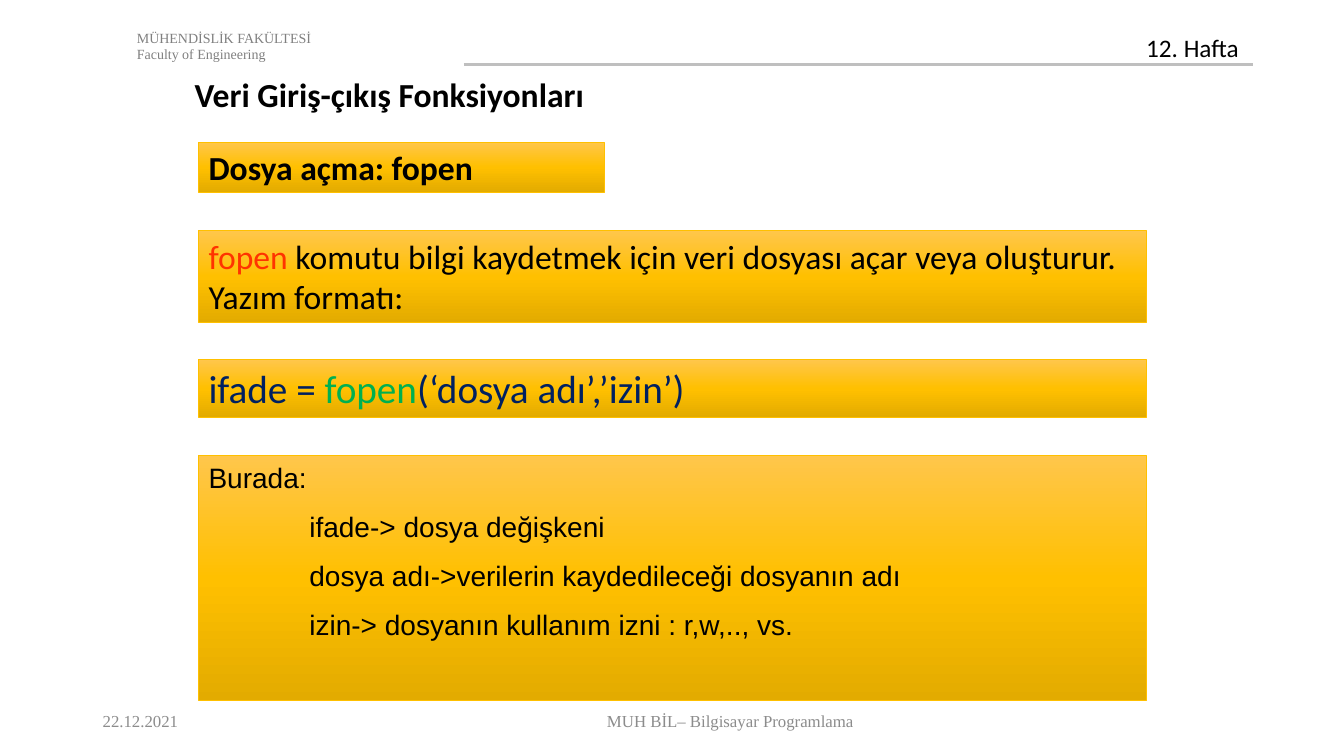
from dataclasses import dataclass

from lxml import etree
from pptx import Presentation
from pptx import util as u
from pptx.dml.color import RGBColor
from pptx.enum import shapes, text
from pptx.oxml.ns import qn
from copy import deepcopy


@dataclass(frozen=True)
class Theme:
    """Colours, fonts and type sizes of the slide."""
    black: str = "000000"
    faculty: str = "808080"
    footer: str = "8C8C8C"
    rule: str = "BFBFBF"
    keyword: str = "FF3300"
    code: str = "002060"
    function: str = "00B050"
    edge: str = "FFC000"
    gradient: tuple = ((0, "FFC64B"), (0.5, "FFC000"), (1, "E3AB00"))
    sans: str = "Calibri"
    list_font: str = "Arial"
    serif: str = "Times New Roman"
    tiny: int = 10
    small: int = 12
    week: int = 18
    listing: int = 20
    heading: int = 24
    syntax: int = 28


THEME = Theme()


def place(shape, box):
    """Move a shape to a box given in inches."""
    shape.left, shape.top, shape.width, shape.height = map(u.Inches, box)


def write(shape, paragraphs, size, font, bold=False, anchor=text.MSO_ANCHOR.TOP,
          align=text.PP_ALIGN.LEFT):
    """Fill a shape with paragraphs made of (wording, colour) runs."""
    frame = shape.text_frame
    frame.word_wrap = True
    frame.auto_size = text.MSO_AUTO_SIZE.NONE
    frame.vertical_anchor = anchor
    for index, runs in enumerate(paragraphs):
        paragraph = frame.add_paragraph() if index else frame.paragraphs[0]
        paragraph.alignment = align
        for wording, colour in runs:
            run = paragraph.add_run()
            run.text = wording
            run.font.size = u.Pt(size)
            run.font.name = font
            run.font.bold = bold
            run.font.color.rgb = RGBColor.from_string(colour)
    return frame


def add_label(slide, box, lines, size, font, colour, **layout):
    """Add a plain text box with one colour of text."""
    label = slide.shapes.add_textbox(*map(u.Inches, box))
    write(label, [[(line, colour)] for line in lines], size, font, **layout)


def add_panel(slide, box, paragraphs, size, font, bold=False):
    """Add an amber gradient panel and return its text frame."""
    panel = slide.shapes.add_shape(shapes.MSO_SHAPE.RECTANGLE, *map(u.Inches, box))
    panel.shadow.inherit = False
    panel.fill.gradient()
    panel.fill.gradient_angle = 270
    stop_list = panel._element.spPr.find(".//" + qn("a:gsLst"))
    stop_list.append(deepcopy(stop_list[-1]))
    for stop, (position, colour) in zip(panel.fill.gradient_stops, THEME.gradient):
        stop.position = position
        stop.color.rgb = RGBColor.from_string(colour)
    panel.line.color.rgb = RGBColor.from_string(THEME.edge)
    panel.line.width = u.Pt(0.5)
    return write(panel, paragraphs, size, font, bold)


def add_header(slide, left, top, right):
    """Add the faculty name, the week label and the rule below it."""
    rule = slide.shapes.add_connector(
        shapes.MSO_CONNECTOR.STRAIGHT, u.Inches(left + 3.34), u.Inches(top + 0.4),
        u.Inches(right), u.Inches(top + 0.4))
    rule.line.color.rgb = RGBColor.from_string(THEME.rule)
    rule.line.width = u.Pt(1.5)
    etree.SubElement(rule._element.spPr, qn("a:effectLst"))
    add_label(slide, (left, top, 6.67, 0.44),
              ["MÜHENDİSLİK FAKÜLTESİ", "Faculty of Engineering"],
              THEME.tiny, THEME.serif, THEME.faculty)
    add_label(slide, (right - 1.16, top + 0.03, 1.15, 0.4), ["12. Hafta"],
              THEME.week, THEME.sans, THEME.black)


def add_title(slide, box):
    """Place the slide title."""
    title = slide.shapes.title
    place(title, box)
    write(title, [[("Veri Giriş-çıkış Fonksiyonları", THEME.black)]],
          THEME.heading, THEME.sans, bold=True)


def add_content(slide, left, top, width):
    """Stack the four panels that explain fopen."""
    add_panel(slide, (left, top, 4.02, 0.5), [[("Dosya açma: fopen", THEME.black)]],
              THEME.heading, THEME.sans, bold=True)
    add_panel(slide, (left, top + 0.88, width, 0.91), [[
        ("fopen", THEME.keyword),
        (" komutu bilgi kaydetmek için veri dosyası açar veya oluşturur. "
         "Yazım formatı:", THEME.black)]], THEME.heading, THEME.sans)
    add_panel(slide, (left, top + 2.16, width, 0.57), [[
        ("ifade = ", THEME.code), ("fopen", THEME.function),
        ("(‘dosya adı’,’izin’)", THEME.code)]], THEME.syntax, THEME.sans)
    terms = ["Burada:", "ifade-> dosya değişkeni",
             "dosya adı->verilerin kaydedileceği dosyanın adı",
             "izin-> dosyanın kullanım izni : r,w,.., vs."]
    frame = add_panel(slide, (left, top + 3.11, width, 2.43),
                      [[(term, THEME.black)] for term in terms],
                      THEME.listing, THEME.list_font)
    for paragraph in frame.paragraphs[1:]:
        paragraph.space_before = u.Pt(11)
        paragraph._p.get_or_add_pPr().set("marL", str(u.Inches(1)))


def add_footer(slide, left, top, height):
    """Add the date and the course name."""
    add_label(slide, (left, top, 1.57, height), ["22.12.2021"], THEME.small,
              THEME.serif, THEME.footer, anchor=text.MSO_ANCHOR.MIDDLE)
    add_label(slide, (left + 1.81, top, 9.03, height),
              ["MUH BİL– Bilgisayar Programlama"], THEME.small, THEME.serif,
              THEME.footer, anchor=text.MSO_ANCHOR.MIDDLE, align=text.PP_ALIGN.CENTER)


def main():
    """Build the slide and save it."""
    presentation = Presentation()
    presentation.slide_width = u.Inches(13.33)
    presentation.slide_height = u.Inches(7.5)
    slide = presentation.slides.add_slide(presentation.slide_layouts[5])
    add_header(slide, 1.26, 0.24, 12.43)
    add_content(slide, 1.97, 1.41, 9.4)
    add_title(slide, (1.83, 0.68, 5.02, 0.5))
    add_footer(slide, 0.92, 6.95, 0.4)
    presentation.save("out.pptx")


if __name__ == "__main__":
    main()
